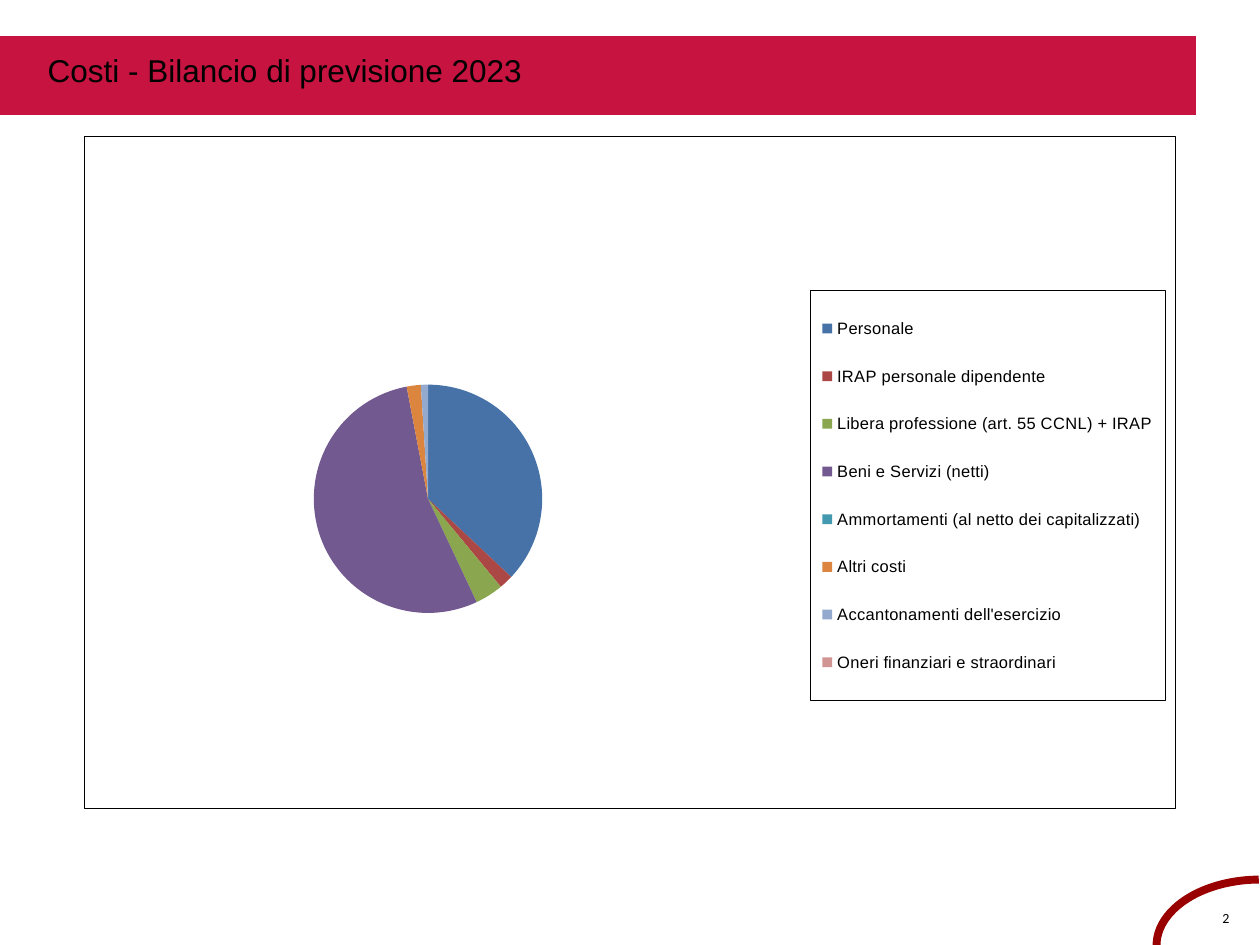
from lxml import etree
from pptx import Presentation
from pptx.chart.data import CategoryChartData
from pptx.dml.color import RGBColor
from pptx.enum.chart import XL_CHART_TYPE, XL_LEGEND_POSITION
from pptx.enum.shapes import MSO_SHAPE
from pptx.enum.text import MSO_ANCHOR, PP_ALIGN
from pptx.oxml import parse_xml
from pptx.oxml.ns import nsdecls, qn
from pptx.util import Pt

PX = 914400 / 126
COLORS = {"band": "C6133F", "arc": "990000", "text": "000000", "paper": "FFFFFF"}
COSTS = [
    ("Personale", 37, "4672A8"),
    ("IRAP personale dipendente", 2, "AB4744"),
    ("Libera professione (art. 55 CCNL) + IRAP", 4, "8AA64F"),
    ("Beni e Servizi (netti)", 54, "725990"),
    ("Ammortamenti (al netto dei capitalizzati)", 0, "4299B0"),
    ("Altri costi", 2, "DC853E"),
    ("Accantonamenti dell'esercizio", 1, "93A9CE"),
    ("Oneri finanziari e straordinari", 0, "D09493"),
]


def box(*lengths):
    return [round(length * PX) for length in lengths]


def chart_layout(x, y, width, height, inner=False):
    layout = etree.Element(qn("c:layout"))
    manual = etree.SubElement(layout, qn("c:manualLayout"))
    settings = [("layoutTarget", "inner")] if inner else []
    settings += [("xMode", "edge"), ("yMode", "edge"),
                 ("x", x), ("y", y), ("w", width), ("h", height)]
    for name, value in settings:
        etree.SubElement(manual, qn(f"c:{name}")).set("val", str(value))
    return layout


presentation = Presentation()
presentation.slide_width, presentation.slide_height = box(1260, 945)
slide = presentation.slides.add_slide(presentation.slide_layouts[5])
shapes = slide.shapes

# Title band, placed behind the title
band = shapes.add_shape(MSO_SHAPE.RECTANGLE, *box(0, 36, 1196, 79))
band.shadow.inherit = False
band.fill.solid()
band.fill.fore_color.rgb = RGBColor.from_string(COLORS["band"])
band.line.fill.background()
shapes.title.element.addprevious(band.element)

# Corner arc
arc = shapes.add_shape(MSO_SHAPE.ARC, *box(1194, 842, 132, 207))
arc.shadow.inherit = False
arc.rotation = 270
arc.adjustments[0] = 162
arc.adjustments[1] = 215.34
arc.fill.background()
arc.line.color.rgb = RGBColor.from_string(COLORS["arc"])
arc.line.width = Pt(4.5)
band.element.addprevious(arc.element)

# Title and page number
title = shapes.title
title.left, title.top, title.width, title.height = box(35, 45, 784, 89)
number = shapes.add_textbox(*box(1206, 905, 40, 20))
number_frame = number.text_frame
number_frame.margin_left = number_frame.margin_right = number_frame.margin_bottom = 0
number_frame.margin_top = round(4 * PX)
for shape, text, font_name, size, alignment in (
    (title, "Costi - Bilancio di previsione 2023", "Arial", 18, PP_ALIGN.LEFT),
    (number, "2", "Calibri", 8, PP_ALIGN.CENTER),
):
    shape.text_frame.word_wrap = True
    shape.text_frame.vertical_anchor = MSO_ANCHOR.TOP
    paragraph = shape.text_frame.paragraphs[0]
    paragraph.alignment = alignment
    run = paragraph.add_run()
    run.text = text
    run.font.name = font_name
    run.font.size = Pt(size)
    run.font.color.rgb = RGBColor.from_string(COLORS["text"])

# Cost pie
chart_data = CategoryChartData()
chart_data.categories = [name for name, value, color in COSTS]
chart_data.add_series("Series 1", [value for name, value, color in COSTS])
chart = shapes.add_chart(XL_CHART_TYPE.PIE, *box(84, 136, 1092, 672), chart_data).chart
chart.has_title = False
chart.font.name = "Arial"
chart.font.size = Pt(10.2)
chart.font.color.rgb = RGBColor.from_string(COLORS["text"])
plot = chart.plots[0]
plot.vary_by_categories = True
for index, (name, value, color) in enumerate(COSTS):
    point = plot.series[0].points[index]
    point.format.fill.solid()
    point.format.fill.fore_color.rgb = RGBColor.from_string(color)
    point.format.line.fill.background()

# Legend
chart.has_legend = True
legend = chart.legend
legend.position = XL_LEGEND_POSITION.RIGHT
legend.include_in_layout = False
legend.font.name = "Arial"
legend.font.size = Pt(9.4)
legend.font.color.rgb = RGBColor.from_string(COLORS["text"])

# Plot and legend positions, then the thin frames
chart_space = chart.element
plot_area = chart_space.find(".//" + qn("c:plotArea"))
for old_layout in plot_area.findall(qn("c:layout")):
    plot_area.remove(old_layout)
plot_area.insert(0, chart_layout(0.05, 0.37, 0.53, 0.34, inner=True))
legend_element = chart_space.find(".//" + qn("c:legend"))
for old_layout in legend_element.findall(qn("c:layout")):
    legend_element.remove(old_layout)
legend_element.find(qn("c:legendPos")).addnext(chart_layout(0.665, 0.23, 0.325, 0.61))
for text_properties in (legend_element.find(qn("c:txPr")), chart_space.find(qn("c:txPr"))):
    text_properties.addprevious(parse_xml(
        f'<c:spPr {nsdecls("c", "a")}>'
        f'<a:solidFill><a:srgbClr val="{COLORS["paper"]}"/></a:solidFill>'
        f'<a:ln w="{Pt(0.25)}"><a:solidFill><a:srgbClr val="{COLORS["text"]}"/></a:solidFill></a:ln>'
        '</c:spPr>'))

presentation.save("out.pptx")
